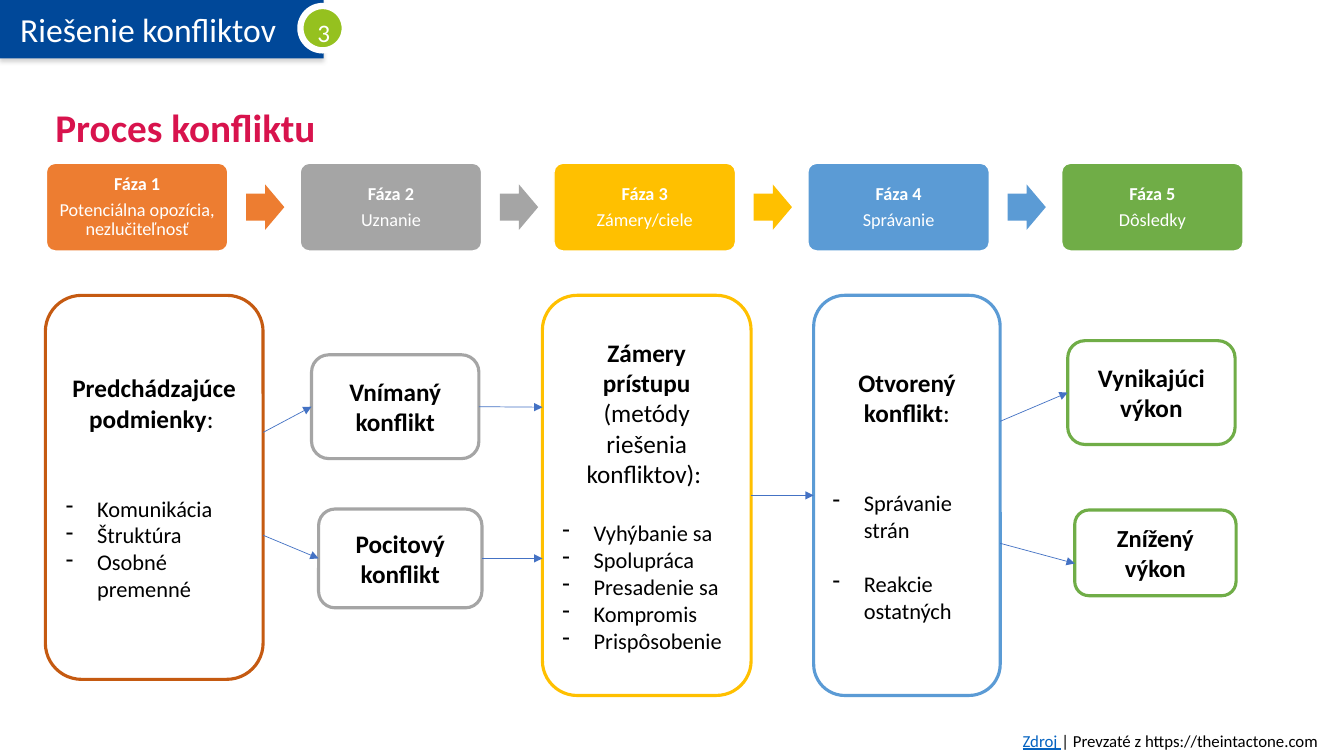
from lxml import etree
from pptx import Presentation
from pptx.dml.color import RGBColor
from pptx.enum.shapes import MSO_CONNECTOR, MSO_SHAPE
from pptx.enum.text import MSO_ANCHOR, MSO_AUTO_SIZE, PP_ALIGN
from pptx.oxml import parse_xml
from pptx.oxml.ns import nsdecls, qn
from pptx.util import Inches, Pt

FONT = "Calibri"
WHITE, BLACK, BLUE = "FFFFFF", "000000", "4472C4"
ORANGE, GRAY, GOLD, SKY, GREEN = "ED7D31", "A5A5A5", "FFC000", "5B9BD5", "70AD47"
PHASES = [
    ("Fáza 1", "Potenciálna opozícia, nezlučiteľnosť", ORANGE),
    ("Fáza 2", "Uznanie", GRAY),
    ("Fáza 3", "Zámery/ciele", GOLD),
    ("Fáza 4", "Správanie", SKY),
    ("Fáza 5", "Dôsledky", GREEN),
]
PHASE_PITCH = 2.5175


def rgb(color):
    return RGBColor.from_string(color)


def set_font(font, size, color=BLACK, bold=None):
    font.name, font.size, font.bold = FONT, Pt(size), bold
    font.color.rgb = rgb(color)


def add_shape(slide, kind, box, fill, line=None, width=1):
    shape = slide.shapes.add_shape(kind, *map(Inches, box))
    shape.shadow.inherit = False
    shape.fill.solid()
    shape.fill.fore_color.rgb = rgb(fill)
    if line:
        shape.line.color.rgb = rgb(line)
        shape.line.width = Pt(width)
    else:
        shape.line.fill.background()
    shape.text_frame.word_wrap = True
    shape.text_frame.vertical_anchor = MSO_ANCHOR.MIDDLE
    return shape


def add_label(slide, box, align):
    """Add an empty text box and return its first paragraph."""
    frame = slide.shapes.add_textbox(*map(Inches, box)).text_frame
    frame.word_wrap = True
    frame.paragraphs[0].alignment = align
    return frame.paragraphs[0]


def add_header(slide):
    banner = add_shape(slide, MSO_SHAPE.RECTANGLE, (0, 0, 3.21, 0.58), "004899")
    effects = banner.element.spPr.find(qn("a:effectLst"))
    effects.append(parse_xml(
        f'<a:outerShdw {nsdecls("a")} blurRad="{Pt(3.1)}" dist="{Pt(1.8)}" dir="5400000">'
        '<a:srgbClr val="808080"><a:alpha val="35000"/></a:srgbClr></a:outerShdw>'))
    banner.text_frame.margin_left = Inches(0.2)
    paragraph = banner.text_frame.paragraphs[0]
    paragraph.alignment = PP_ALIGN.LEFT
    paragraph.text = "Riešenie konfliktov"
    set_font(paragraph.font, 24, WHITE)

    add_shape(slide, MSO_SHAPE.OVAL, (2.98, 0.06, 0.44, 0.44), "95C11F", WHITE, 4.5)
    number = add_label(slide, (3.05, -0.03, 0.35, 0.51), PP_ALIGN.LEFT)
    number.text = "3"
    number.line_spacing = 1.5
    set_font(number.font, 18, WHITE)


def add_title(slide):
    title = slide.shapes.title
    title.left, title.top, title.width, title.height = map(Inches, (0.45, 0.96, 12.46, 0.66))
    frame = title.text_frame
    frame.auto_size = MSO_AUTO_SIZE.NONE
    frame.vertical_anchor = MSO_ANCHOR.MIDDLE
    paragraph = frame.paragraphs[0]
    paragraph.text = "Proces konfliktu"
    paragraph.alignment = PP_ALIGN.LEFT
    paragraph.line_spacing = 0.9
    set_font(paragraph.font, 28, "D8134D", True)


def add_phase(slide, left, name, description, color):
    card = add_shape(slide, MSO_SHAPE.ROUNDED_RECTANGLE, (left, 1.62, 1.8, 0.87), color, WHITE)
    card.adjustments[0] = 0.1
    frame = card.text_frame
    frame.margin_left = frame.margin_right = Inches(0.05)
    frame.text = f"{name}\n{description}"
    for paragraph, bold in zip(frame.paragraphs, (True, False)):
        paragraph.alignment = PP_ALIGN.CENTER
        paragraph.line_spacing = 0.9
        set_font(paragraph.font, 13, WHITE, bold)
    frame.paragraphs[0].space_after = Pt(4.5)


def add_phase_arrow(slide, left, color):
    arrow = add_shape(slide, MSO_SHAPE.RIGHT_ARROW, (left, 1.83, 0.38, 0.45), color)
    arrow.adjustments[0] = 0.6


def add_step(slide, box, color, heading, detail="", items=(), list_gap=0, item_gap=0, size=18):
    """Add an outlined box: bold heading, plain detail after it, dashed list below."""
    step = add_shape(slide, MSO_SHAPE.FLOWCHART_ALTERNATE_PROCESS, box, WHITE, color, 2.25)
    frame = step.text_frame
    paragraph = frame.paragraphs[0]
    paragraph.alignment = PP_ALIGN.CENTER
    set_font(paragraph.font, size)
    for text, bold in ((heading, True), (detail, False)):
        if text:
            run = paragraph.add_run()
            run.text = text
            run.font.bold = bold
    for index, item in enumerate(items):
        paragraph = frame.add_paragraph()
        paragraph.text = item
        paragraph.alignment = PP_ALIGN.LEFT
        paragraph.space_before = Pt(item_gap if index else list_gap)
        properties = paragraph._p.get_or_add_pPr()
        properties.set("marL", str(Inches(0.31)))
        properties.set("indent", str(-Inches(0.31)))
        etree.SubElement(properties, qn("a:buChar"), char="-")
        set_font(paragraph.font, 16)
    return step


def add_arrow(slide, start, end, source=None, target=None):
    """Draw an arrow; source is left by its right side, target entered by its left."""
    arrow = slide.shapes.add_connector(MSO_CONNECTOR.STRAIGHT, *map(Inches, start + end))
    if source:
        arrow.begin_connect(source, 3)
    if target:
        arrow.end_connect(target, 1)
    arrow.line.color.rgb = rgb(BLUE)
    arrow.line.width = Pt(0.5)
    etree.SubElement(arrow.line._get_or_add_ln(), qn("a:tailEnd"), type="triangle")
    etree.SubElement(arrow.element.spPr, qn("a:effectLst"))


def add_source(slide):
    paragraph = add_label(slide, (3.62, 7.2, 9.59, 0.3), PP_ALIGN.RIGHT)
    link, credit = paragraph.add_run(), paragraph.add_run()
    link.text = "Zdroj "
    credit.text = "| Prevzaté z https://theintactone.com "
    set_font(link.font, 12, "0563C1")
    link.font.underline = True
    set_font(credit.font, 12)


def main():
    presentation = Presentation()
    presentation.slide_width, presentation.slide_height = Inches(13.33), Inches(7.5)
    slide = presentation.slides.add_slide(presentation.slide_layouts[5])
    add_header(slide)
    add_title(slide)

    for index, (name, description, color) in enumerate(PHASES):
        left = 0.46 + index * PHASE_PITCH
        add_phase(slide, left, name, description, color)
        if index < len(PHASES) - 1:
            add_phase_arrow(slide, left + 1.98, color)

    add_step(slide, (0.45, 2.93, 2.16, 3.81), "C55A11", "Predchádzajúce podmienky", ": ",
             ("Komunikácia", "Štruktúra", "Osobné premenné"), list_gap=44)
    perceived = add_step(slide, (3.09, 3.52, 1.66, 1.03), GRAY, "Vnímaný konflikt")
    felt = add_step(slide, (3.16, 5.05, 1.62, 0.98), GRAY, "Pocitový konflikt")
    intentions = add_step(
        slide, (5.38, 2.93, 2.07, 3.97), GOLD, "Zámery prístupu ",
        "(metódy riešenia konfliktov): ",
        ("Vyhýbanie sa", "Spolupráca", "Presadenie sa", "Kompromis", "Prispôsobenie"),
        list_gap=22)
    overt = add_step(slide, (8.07, 2.93, 1.85, 3.97), SKY, "Otvorený konflikt", ":",
                     ("Správanie strán", "Reakcie ostatných"), list_gap=44, item_gap=19.5)
    excellent = add_step(slide, (10.59, 3.38, 1.66, 1.03), GREEN, "Vynikajúci výkon")
    add_step(slide, (10.66, 5.06, 1.6, 0.85), GREEN, "Znížený výkon", size=17.5)
    add_source(slide)

    add_arrow(slide, (2.61, 4.29), (3.09, 4.04), target=perceived)
    add_arrow(slide, (2.61, 5.31), (3.16, 5.54), target=felt)
    add_arrow(slide, (4.75, 4.04), (5.38, 4.04), source=perceived)
    add_arrow(slide, (4.78, 5.54), (5.38, 5.54), source=felt)
    add_arrow(slide, (7.45, 4.92), (8.07, 4.92), source=intentions, target=overt)
    add_arrow(slide, (9.92, 4.18), (10.59, 3.9), target=excellent)
    add_arrow(slide, (9.92, 5.39), (10.66, 5.59))
    presentation.save("out.pptx")


if __name__ == "__main__":
    main()
